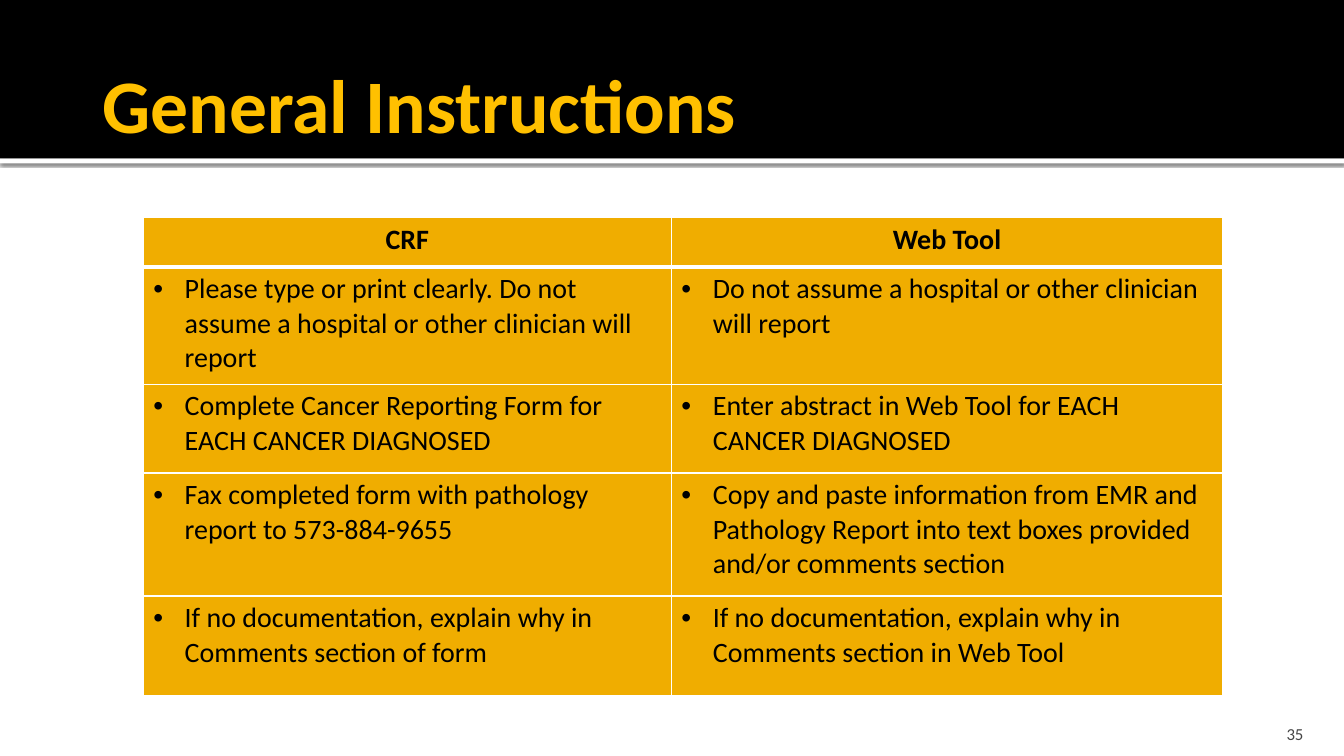
from dataclasses import dataclass

from lxml.etree import SubElement
from pptx import Presentation
from pptx.dml.color import RGBColor
from pptx.enum.shapes import MSO_SHAPE as Preset
from pptx.enum.text import MSO_ANCHOR as Anchor, PP_ALIGN as Align
from pptx.oxml.ns import qn
from pptx.util import Cm, Pt


@dataclass(frozen=True)
class Theme:
    font: str = "Calibri"
    black: str = "000000"
    white: str = "FFFFFF"
    gold: str = "FFC000"
    amber: str = "F0AD00"
    grey: str = "454545"
    title_size: int = 54
    table_size: int = 20
    number_size: int = 12
    rule_width: int = 1
    header_rule_width: int = 3


THEME = Theme()

COLUMN_WIDTHS = [13.31, 13.89]
ROW_HEIGHTS = [1.24, 2.95, 2.24, 3.1, 2.51]
INSTRUCTIONS = [
    ("CRF", "Web Tool"),
    ("Please type or print clearly. Do not assume a hospital or other clinician will report",
     "Do not assume a hospital or other clinician will report"),
    ("Complete Cancer Reporting Form for EACH CANCER DIAGNOSED",
     "Enter abstract in Web Tool for EACH CANCER DIAGNOSED"),
    ("Fax completed form with pathology report to 573-884-9655",
     "Copy and paste information from EMR and Pathology Report into text boxes "
     "provided and/or comments section"),
    ("If no documentation, explain why in Comments section of form",
     "If no documentation, explain why in Comments section in Web Tool"),
]


def write(text_frame, text, size, color, bold=False, align=Align.LEFT):
    text_frame.text = text
    text_frame.word_wrap = True
    paragraph = text_frame.paragraphs[0]
    paragraph.alignment = align
    font = paragraph.runs[0].font
    font.name, font.size, font.bold = THEME.font, Pt(size), bold
    font.color.rgb = RGBColor.from_string(color)
    return paragraph


def add_text(slide, box, text, size, color, anchor, margins, **style):
    text_frame = slide.shapes.add_textbox(*map(Cm, box)).text_frame
    (text_frame.margin_left, text_frame.margin_top,
     text_frame.margin_right, text_frame.margin_bottom) = map(Cm, margins)
    text_frame.vertical_anchor = anchor
    write(text_frame, text, size, color, **style)


def add_band(slide, box, color):
    shape = slide.shapes.add_shape(Preset.RECTANGLE, *map(Cm, box))
    shape.shadow.inherit = False
    shape.fill.solid()
    shape.fill.fore_color.rgb = RGBColor.from_string(color)
    shape.line.fill.background()
    return shape


def add_soft_shadow(shape):
    effects = shape._element.spPr.find(qn("a:effectLst"))
    shadow = SubElement(effects, qn("a:outerShdw"), blurRad=str(Pt(2.5)),
                        dist=str(Pt(0.8)), dir="5400000", algn="t", rotWithShape="0")
    color = SubElement(shadow, qn("a:srgbClr"), val=THEME.black)
    SubElement(color, qn("a:alpha"), val="60000")


def add_header(slide, left, top, width, height):
    # White strip with a shadow, under the black band
    strip = add_band(slide, (left, top + height, width, 0.13), THEME.white)
    add_soft_shadow(strip)
    add_band(slide, (left, top, width, height), THEME.black)
    # Title
    add_text(slide, (left + 2.34, top + 0.76, 28.58, 3.68), "General Instructions",
             THEME.title_size, THEME.gold, Anchor.MIDDLE,
             (0.25, 0.13, 0.13, 0.13), bold=True)


def set_borders(cell, bottom_width):
    properties = cell._tc.get_or_add_tcPr()
    sides = {"a:lnL": THEME.rule_width, "a:lnR": THEME.rule_width,
             "a:lnT": THEME.rule_width, "a:lnB": bottom_width}
    for side, width in sides.items():
        line = SubElement(properties, qn(side), w=str(Pt(width)))
        fill = SubElement(line, qn("a:solidFill"))
        SubElement(fill, qn("a:srgbClr"), val=THEME.white)


def add_bullet(paragraph):
    properties = paragraph._p.get_or_add_pPr()
    properties.set("marL", str(Cm(0.79)))
    properties.set("indent", str(-Cm(0.79)))
    SubElement(properties, qn("a:buFont"), typeface="Arial")
    SubElement(properties, qn("a:buChar"), char="•")


def add_instructions(slide, left, top, width, height):
    table = slide.shapes.add_table(len(ROW_HEIGHTS), len(COLUMN_WIDTHS),
                                   *map(Cm, (left, top, width, height))).table
    for column, column_width in zip(table.columns, COLUMN_WIDTHS):
        column.width = Cm(column_width)
    for row, row_height in zip(table.rows, ROW_HEIGHTS):
        row.height = Cm(row_height)

    for row_index, texts in enumerate(INSTRUCTIONS):
        is_header = row_index == 0
        for column_index, text in enumerate(texts):
            cell = table.cell(row_index, column_index)
            paragraph = write(cell.text_frame, text, THEME.table_size, THEME.black,
                              bold=is_header,
                              align=Align.CENTER if is_header else Align.LEFT)
            if not is_header:
                add_bullet(paragraph)
            set_borders(cell, THEME.header_rule_width if is_header else THEME.rule_width)
            cell.fill.solid()
            cell.fill.fore_color.rgb = RGBColor.from_string(THEME.amber)


def add_slide_number(slide, left, top, width, height):
    add_text(slide, (left, top, width, height), "35", THEME.number_size, THEME.grey,
             Anchor.BOTTOM, (0.25, 0.13, 0.25, 0), align=Align.RIGHT)


def main():
    presentation = Presentation()
    presentation.slide_width, presentation.slide_height = Cm(33.87), Cm(19.05)
    slide = presentation.slides.add_slide(presentation.slide_layouts[6])
    add_header(slide, 0, 0, 33.87, 3.99)
    add_slide_number(slide, 30.38, 17.98, 2.72, 0.76)
    add_instructions(slide, 3.61, 5.49, sum(COLUMN_WIDTHS), sum(ROW_HEIGHTS))
    presentation.save("out.pptx")


if __name__ == "__main__":
    main()
